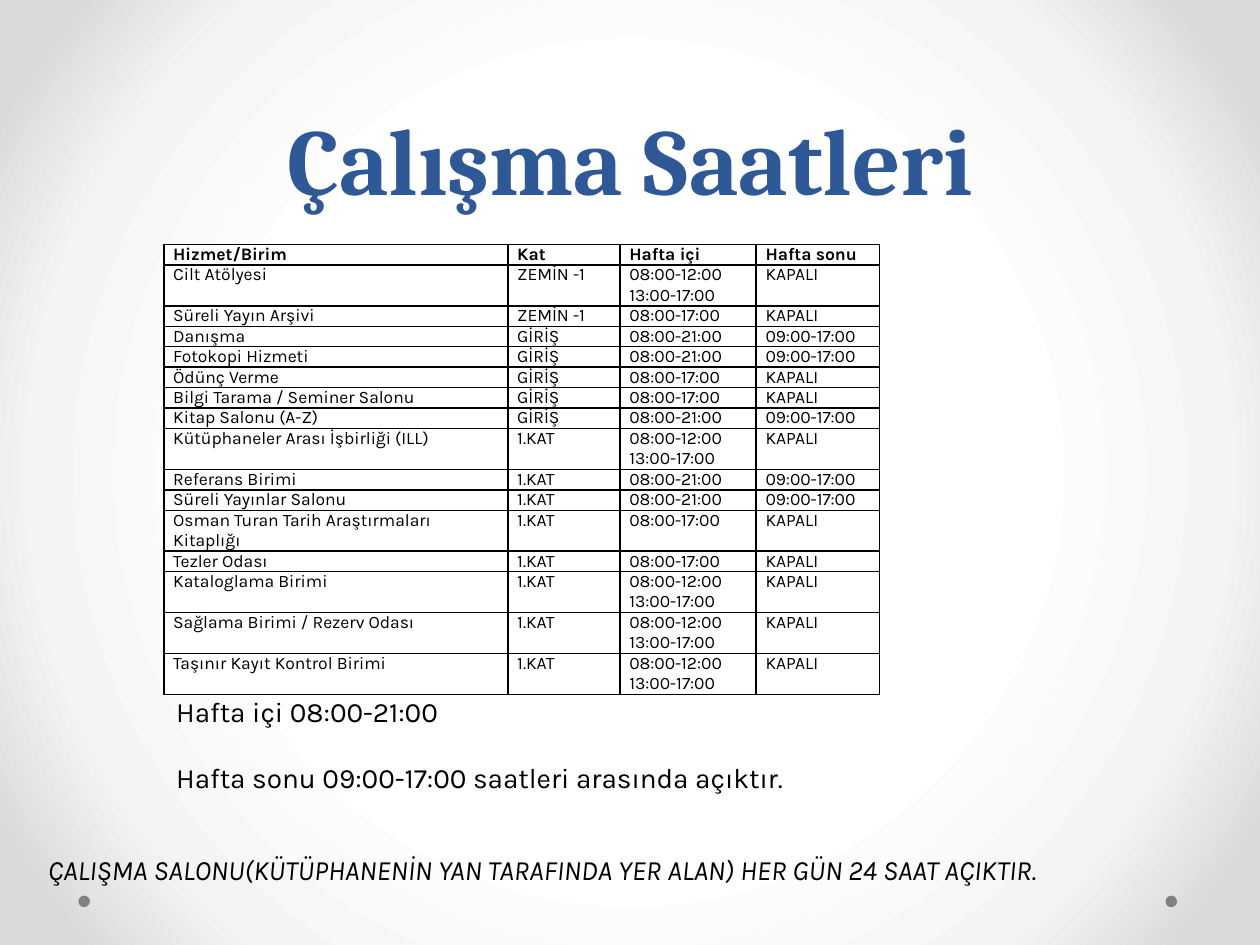
from dataclasses import dataclass

from lxml import etree
from pptx import Presentation
from pptx.dml.color import RGBColor
from pptx.enum.shapes import MSO_SHAPE
from pptx.enum.text import MSO_ANCHOR, MSO_AUTO_SIZE, PP_ALIGN
from pptx.oxml import parse_xml
from pptx.util import Pt

OVAL = MSO_SHAPE.OVAL
CENTER = PP_ALIGN.CENTER
BOTTOM = MSO_ANCHOR.BOTTOM
GROW = MSO_AUTO_SIZE.SHAPE_TO_FIT_TEXT
DRAWING = "http://schemas.openxmlformats.org/drawingml/2006/main"
TITLE_ONLY = 5


@dataclass(frozen=True)
class Theme:
    """Colours, fonts and type sizes of the slide."""
    title: str = "2F5897"
    ink: str = "000000"
    paper: str = "FFFFFF"
    dot: str = "808080"
    glow: tuple = ((50, "FFFFFF"), (76, "F4F4F4"), (92, "DADADA"))
    heading_font: str = "Cambria"
    body_font: str = "Karla"
    title_size: float = 54
    note_size: float = 16
    table_size: float = 10


THEME = Theme()
SPLIT = "08:00-12:00\n13:00-17:00"
DAY = "08:00-17:00"
LONG = "08:00-21:00"
CLOSED = "KAPALI"
WEEKEND = "09:00-17:00"
COLUMN_WIDTHS = (196.6, 64.1, 77.8, 70.6)
LINE_HEIGHT = 11.7
TWO_LINE_NAME = "Osman Turan Tarih Araştırmaları Kitaplığı"
HOURS = (
    ("Hizmet/Birim", "Kat", "Hafta içi", "Hafta sonu"),
    ("Cilt Atölyesi", "ZEMİN -1", SPLIT, CLOSED),
    ("Süreli Yayın Arşivi", "ZEMİN -1", DAY, CLOSED),
    ("Danışma", "GİRİŞ", LONG, WEEKEND),
    ("Fotokopi Hizmeti", "GİRİŞ", LONG, WEEKEND),
    ("Ödünç Verme", "GİRİŞ", DAY, CLOSED),
    ("Bilgi Tarama / Seminer Salonu", "GİRİŞ", DAY, CLOSED),
    ("Kitap Salonu (A-Z)", "GİRİŞ", LONG, WEEKEND),
    ("Kütüphaneler Arası İşbirliği (ILL)", "1.KAT", SPLIT, CLOSED),
    ("Referans Birimi", "1.KAT", LONG, WEEKEND),
    ("Süreli Yayınlar Salonu", "1.KAT", LONG, WEEKEND),
    (TWO_LINE_NAME, "1.KAT", DAY, CLOSED),
    ("Tezler Odası", "1.KAT", DAY, CLOSED),
    ("Kataloglama Birimi", "1.KAT", SPLIT, CLOSED),
    ("Sağlama Birimi / Rezerv Odası", "1.KAT", SPLIT, CLOSED),
    ("Taşınır Kayıt Kontrol Birimi", "1.KAT", SPLIT, CLOSED),
)


def add_run(paragraph, text, size, font=THEME.body_font, color=THEME.ink,
            bold=False, italic=False):
    """Append one formatted run to a paragraph."""
    run = paragraph.add_run()
    run.text = text
    run.font.size = Pt(size)
    run.font.name = font
    run.font.bold = bold
    run.font.italic = italic
    run.font.color.rgb = RGBColor.from_string(color)


def set_background(slide):
    """Give the slide a circular gradient that darkens towards the corners."""
    slide.background.fill.gradient()
    properties = slide.background._cSld.bg.bgPr
    stops = "".join(
        f'<a:gs pos="{position * 1000}"><a:srgbClr val="{color}"/></a:gs>'
        for position, color in THEME.glow)
    gradient = parse_xml(
        f'<a:gradFill xmlns:a="{DRAWING}" rotWithShape="1"><a:gsLst>{stops}</a:gsLst>'
        '<a:path path="circle"><a:fillToRect l="50000" t="50000" r="50000" b="50000"/>'
        '</a:path></a:gradFill>')
    properties.replace(properties.find(f"{{{DRAWING}}}gradFill"), gradient)


def add_dot(slide, left, top, diameter):
    """Draw a small grey footer dot."""
    dot = slide.shapes.add_shape(OVAL, Pt(left), Pt(top), Pt(diameter), Pt(diameter))
    dot.shadow.inherit = False
    dot.fill.solid()
    dot.fill.fore_color.rgb = RGBColor.from_string(THEME.dot)
    dot.line.fill.background()


def set_title(slide, text):
    """Place and format the title placeholder."""
    title = slide.shapes.title
    title.left, title.top, title.width, title.height = Pt(36), Pt(0), Pt(648), Pt(126)
    title.text_frame.vertical_anchor = BOTTOM
    paragraph = title.text_frame.paragraphs[0]
    paragraph.alignment = CENTER
    paragraph.line_spacing = Pt(58)
    add_run(paragraph, text, THEME.title_size, THEME.heading_font, THEME.title, bold=True)


def add_borders(cell):
    """Put a thin line on all four sides of a cell."""
    properties = cell._tc.get_or_add_tcPr()
    for index, side in enumerate(("lnL", "lnR", "lnT", "lnB")):
        line = etree.Element(f"{{{DRAWING}}}{side}", w=str(Pt(1)))
        fill = etree.SubElement(line, f"{{{DRAWING}}}solidFill")
        etree.SubElement(fill, f"{{{DRAWING}}}srgbClr", val=THEME.ink)
        properties.insert(index, line)


def fill_cell(cell, text, bold):
    """Write and format one table cell."""
    cell.margin_left = cell.margin_right = Pt(5.4)
    cell.margin_top = cell.margin_bottom = Pt(0)
    cell.fill.solid()
    cell.fill.fore_color.rgb = RGBColor.from_string(THEME.paper)
    add_borders(cell)
    paragraph = cell.text_frame.paragraphs[0]
    for index, line in enumerate(text.split("\n")):
        if index:
            paragraph.add_line_break()
        add_run(paragraph, line, THEME.table_size, bold=bold)


def add_hours_table(slide, left, top):
    """Add the table of opening hours per unit."""
    line_counts = [2 if SPLIT in row or TWO_LINE_NAME in row else 1 for row in HOURS]
    frame = slide.shapes.add_table(
        len(HOURS), len(COLUMN_WIDTHS), Pt(left), Pt(top),
        Pt(sum(COLUMN_WIDTHS)), Pt(sum(line_counts) * LINE_HEIGHT))
    table = frame.table
    table.first_row = table.horz_banding = False
    for column, width in zip(table.columns, COLUMN_WIDTHS):
        column.width = Pt(width)
    for row_index, (values, lines) in enumerate(zip(HOURS, line_counts)):
        table.rows[row_index].height = Pt(lines * LINE_HEIGHT)
        for column_index, value in enumerate(values):
            fill_cell(table.cell(row_index, column_index), value, bold=row_index == 0)


def add_note(slide, left, top, width, height, lines, gap=0, italic=False):
    """Add a text box with one paragraph per line, a gap apart."""
    box = slide.shapes.add_textbox(Pt(left), Pt(top), Pt(width), Pt(height))
    text_frame = box.text_frame
    text_frame.word_wrap = True
    text_frame.auto_size = GROW
    for index, line in enumerate(lines):
        paragraph = text_frame.add_paragraph() if index else text_frame.paragraphs[0]
        if index:
            paragraph.space_before = Pt(gap)
        add_run(paragraph, line, THEME.note_size, italic=italic)


def main():
    """Build the opening hours slide."""
    presentation = Presentation()
    presentation.slide_width, presentation.slide_height = Pt(720), Pt(540)
    slide = presentation.slides.add_slide(presentation.slide_layouts[TITLE_ONLY])
    set_background(slide)
    for left in (666, 44.8):
        add_dot(slide, left, 511.8, 6.6)
    set_title(slide, "Çalışma Saatleri")
    add_hours_table(slide, 93.6, 139.7)
    add_note(slide, 20.2, 483.8, 680.4, 26.6,
             ["ÇALIŞMA SALONU(KÜTÜPHANENİN YAN TARAFINDA YER ALAN) HER GÜN 24 SAAT AÇIKTIR."],
             italic=True)
    add_note(slide, 93.6, 393.1, 414, 65.5,
             ["Hafta içi 08:00-21:00", "Hafta sonu 09:00-17:00 saatleri arasında açıktır."],
             gap=19)
    presentation.save("out.pptx")


if __name__ == "__main__":
    main()
